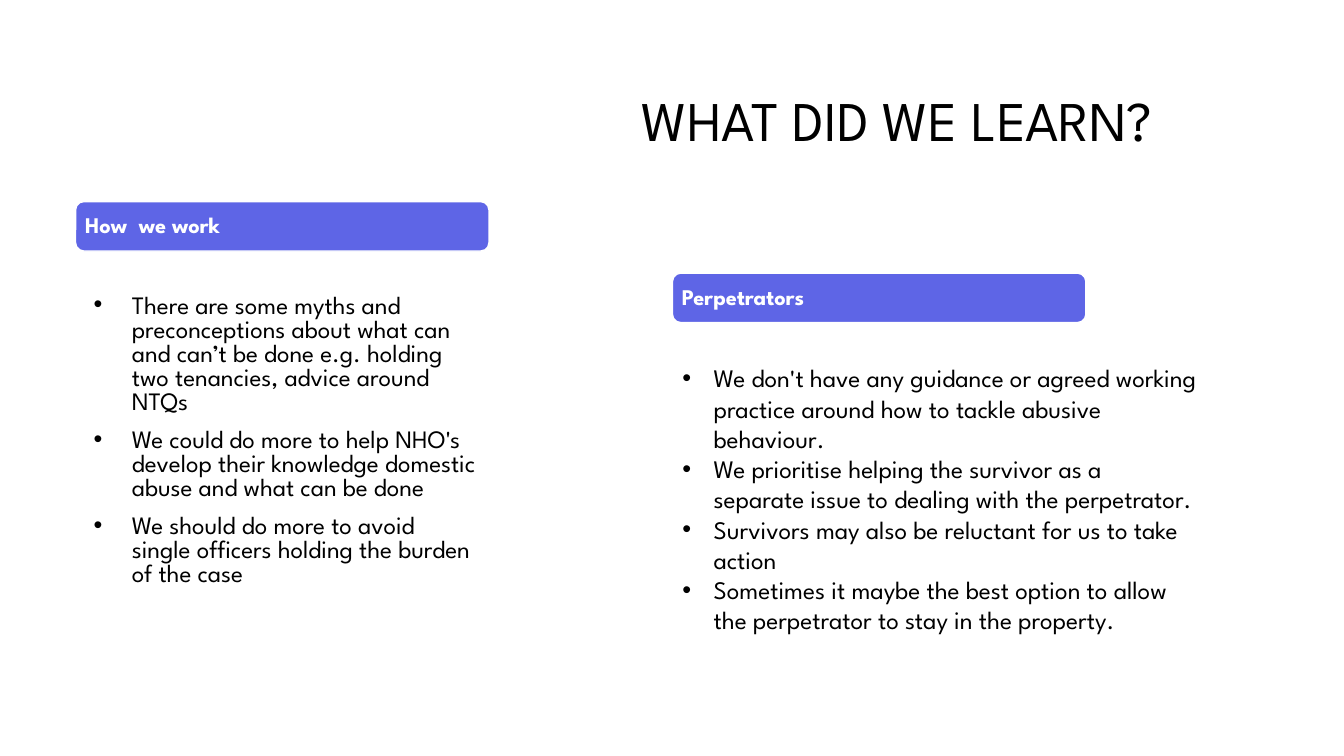
from dataclasses import dataclass

import pptx
import pptx.dml.color
import pptx.enum.shapes
import pptx.enum.text
import pptx.oxml.ns
import pptx.util
from lxml import etree
from pptx.util import Inches

FONT = "League Spartan"
COLORS = {"text": "000000", "bar": "5E65E6", "white": "FFFFFF"}
Align = pptx.enum.text.PP_ALIGN
Anchor = pptx.enum.text.MSO_ANCHOR


@dataclass
class Box:
    left: float
    top: float
    width: float
    height: float

    def lengths(self) -> list:
        return [Inches(v) for v in (self.left, self.top, self.width, self.height)]


@dataclass
class Panel:
    head: str
    bar: Box
    body: Box
    points: list[str]
    size: float
    indent: float
    line: float
    gap: float


PANELS = [
    Panel("How  we work", Box(0.75, 2, 4.1, 0.49), Box(0.83, 2.88, 4.03, 3.54), [
        "There are some myths and preconceptions about what can and can’t be done "
        "e.g. holding two tenancies, advice around NTQs",
        "We could do more to help NHO's develop their knowledge domestic abuse "
        "and what can be done",
        "We should do more to avoid single officers holding the burden of the case",
    ], 17.9, 0.38, 0.8, 10),
    Panel("Perpetrators", Box(6.67, 2.71, 4.1, 0.49), Box(6.67, 3.55, 5.3, 3.43), [
        "We don't have any guidance or agreed working practice around how to tackle "
        "abusive behaviour.",
        "We prioritise helping the survivor as a separate issue to dealing with "
        "the perpetrator.",
        "Survivors may also be reluctant for us to take action",
        "Sometimes it maybe the best option to allow the perpetrator to stay "
        "in the property.",
    ], 18, 0.31, 1, 0),
]


def color(name: str) -> pptx.dml.color.RGBColor:
    return pptx.dml.color.RGBColor.from_string(COLORS[name])


def add_run(para, text: str, size: float, tint: str = "text", bold: bool = False) -> None:
    run = para.add_run()
    run.text = text
    run.font.name = FONT
    run.font.size = pptx.util.Pt(size)
    run.font.bold = bold
    run.font.color.rgb = color(tint)


def add_bullet(para, indent: float) -> None:
    props = para._p.get_or_add_pPr()
    props.set("marL", str(Inches(indent)))
    props.set("indent", str(-Inches(indent)))
    for tag, key, value in (("a:buFont", "typeface", "Arial"), ("a:buChar", "char", "•")):
        etree.SubElement(props, pptx.oxml.ns.qn(tag)).set(key, value)


def add_text(slide, box: Box):
    frame = slide.shapes.add_textbox(*box.lengths()).text_frame
    frame.word_wrap = True
    return frame


def add_title(slide, text: str) -> None:
    frame = add_text(slide, Box(2.11, 0.52, 9.42, 1.41))
    frame.vertical_anchor = Anchor.MIDDLE
    para = frame.paragraphs[0]
    para.alignment = Align.RIGHT
    para.line_spacing = 0.9
    add_run(para, text, 40)


def add_panel(slide, panel: Panel) -> None:
    # Heading bar
    kind = pptx.enum.shapes.MSO_SHAPE.ROUNDED_RECTANGLE
    bar = slide.shapes.add_shape(kind, *panel.bar.lengths())
    bar.shadow.inherit = False
    bar.fill.solid()
    bar.fill.fore_color.rgb = color("bar")
    bar.line.color.rgb = color("white")
    bar.line.width = pptx.util.Pt(1)
    frame = bar.text_frame
    frame.word_wrap = True
    frame.vertical_anchor = Anchor.MIDDLE
    frame.margin_left = frame.margin_right = Inches(0.07)
    para = frame.paragraphs[0]
    para.alignment = Align.LEFT
    para.line_spacing = 0.9
    add_run(para, panel.head, 16, "white", True)

    # Bullet points
    frame = add_text(slide, panel.body)
    for i, point in enumerate(panel.points):
        para = frame.add_paragraph() if i else frame.paragraphs[0]
        add_bullet(para, panel.indent)
        para.line_spacing = panel.line
        para.space_before = pptx.util.Pt(panel.gap if i else 0)
        add_run(para, point, panel.size)


def main() -> None:
    deck = pptx.Presentation()
    deck.slide_width, deck.slide_height = Inches(13.33), Inches(7.5)
    slide = deck.slides.add_slide(deck.slide_layouts[6])
    add_title(slide, "WHAT DID WE LEARN?")
    for panel in PANELS:
        add_panel(slide, panel)
    deck.save("out.pptx")


if __name__ == "__main__":
    main()
